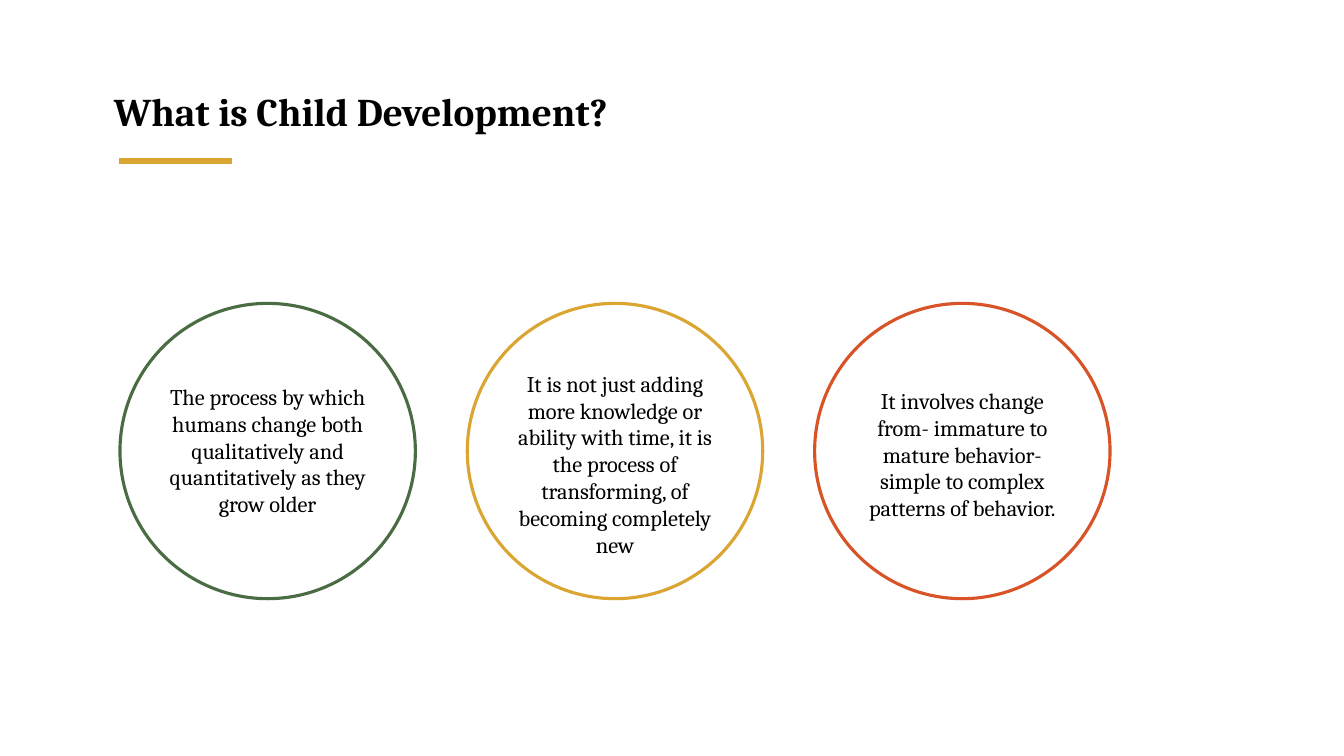
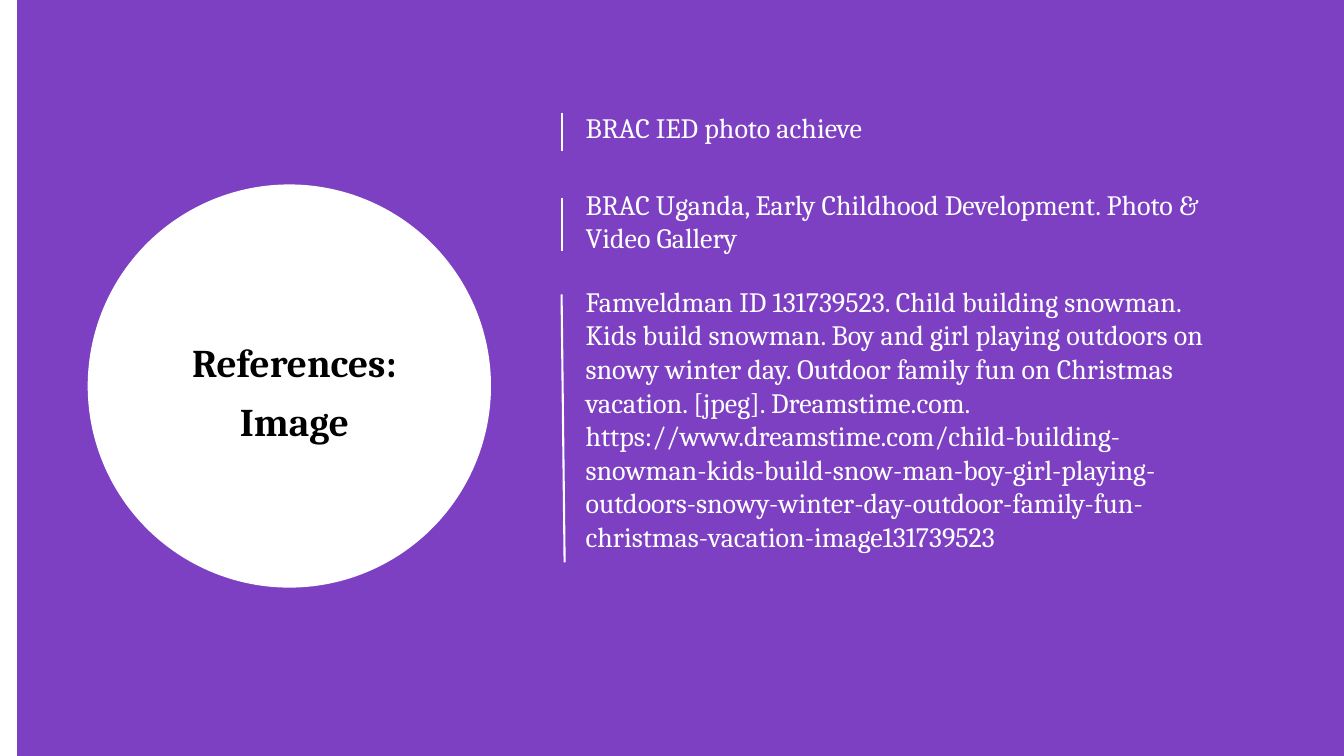
from pptx import Presentation
from pptx.dml.color import RGBColor
from pptx.enum.shapes import MSO_CONNECTOR as Connector, MSO_SHAPE as Shape
from pptx.enum.text import MSO_ANCHOR as Anchor, MSO_AUTO_SIZE as AutoSize, PP_ALIGN as Align
from pptx.oxml.ns import qn
from pptx.util import Inches, Pt
from lxml.etree import SubElement

BLACK = RGBColor(0x00, 0x00, 0x00)
WHITE = RGBColor(0xFF, 0xFF, 0xFF)
GOLD = RGBColor(0xDA, 0xA5, 0x30)
GREEN = RGBColor(0x4A, 0x6C, 0x43)
ORANGE = RGBColor(0xD8, 0x53, 0x27)
PURPLE = RGBColor(0x7D, 0x40, 0xC3)

TITLE_ONLY = 5


class Slides:
    """Holds the shared style and the slide being built."""

    font_name = "Cambria"
    title_size = 28

    def __init__(self):
        self.deck = Presentation()
        self.deck.slide_width = Inches(13.33)
        self.deck.slide_height = Inches(7.5)
        self.page = None

    def add_page(self):
        self.page = self.deck.slides.add_slide(self.deck.slide_layouts[TITLE_ONLY])

    def fill_text(self, box, lines, size, color, align, bold=False):
        frame = box.text_frame
        frame.word_wrap = True
        frame.auto_size = AutoSize.NONE
        frame.vertical_anchor = Anchor.TOP
        frame.text = "\n".join(lines)
        for number, para in enumerate(frame.paragraphs):
            para.alignment = align
            para.space_before = Pt(8 if number else 0)
            para.font.name = self.font_name
            para.font.size = Pt(size)
            para.font.bold = bold
            para.font.color.rgb = color

    def title(self, lines, left, top, width, height, align=Align.LEFT):
        box = self.page.shapes.title
        box.left, box.top = Inches(left), Inches(top)
        box.width, box.height = Inches(width), Inches(height)
        self.fill_text(box, lines, self.title_size, BLACK, align, bold=True)
        # Bring the title in front of the shapes drawn so far
        box.element.getparent().append(box.element)

    def text(self, words, left, top, width, height, size, color, align=Align.LEFT):
        box = self.page.shapes.add_textbox(
            Inches(left), Inches(top), Inches(width), Inches(height))
        self.fill_text(box, [words], size, color, align)

    def shape(self, kind, left, top, width, height, fill=None, outline=None):
        shape = self.page.shapes.add_shape(
            kind, Inches(left), Inches(top), Inches(width), Inches(height))
        shape.shadow.inherit = False
        if fill is None:
            shape.fill.background()
        else:
            shape.fill.solid()
            shape.fill.fore_color.rgb = fill
        if outline is None:
            shape.line.fill.background()
        else:
            shape.line.color.rgb = outline
            shape.line.width = Pt(2.25)

    def line(self, x1, y1, x2, y2, color, width):
        line = self.page.shapes.add_connector(
            Connector.STRAIGHT, Inches(x1), Inches(y1), Inches(x2), Inches(y2))
        line.line.color.rgb = color
        line.line.width = Pt(width)
        SubElement(line.element.spPr, qn("a:effectLst"))


def build_definition(slides):
    slides.add_page()
    slides.title(["What is Child Development?"], 1.03, 0.82, 9.03, 0.57)
    slides.line(1.18, 1.6, 2.3, 1.6, GOLD, 4.5)

    # Three equally spaced circles: outline, text top, text height, words
    circles = [
        (GREEN, 3.75, 1.45, "The process by which humans change both qualitatively "
                            "and quantitatively as they grow older"),
        (GOLD, 3.62, 1.99, "It is not just adding more knowledge or ability with time, "
                           "it is the process of transforming, of becoming completely new"),
        (ORANGE, 3.79, 1.45, "It involves change from- immature to mature behavior- "
                             "simple to complex patterns of behavior."),
    ]
    first_left, last_left, diameter, text_width = 1.19, 8.08, 2.93, 2.35
    pitch = (last_left - first_left) / (len(circles) - 1)
    inset = (diameter - text_width) / 2
    for number, (color, top, height, words) in enumerate(circles):
        left = first_left + number * pitch
        slides.text(words, left + inset, top, text_width, height, 16, BLACK, Align.CENTER)
        slides.shape(Shape.OVAL, left, 3.01, diameter, diameter, outline=color)


def build_references(slides):
    slides.add_page()
    # Purple panel and the title circle
    slides.shape(Shape.RECTANGLE, 0.17, 0, 13.16, 7.5, fill=PURPLE)
    slides.shape(Shape.OVAL, 0.87, 1.83, 4, 4, fill=WHITE)
    slides.title(["References:", "Image"], 0.87, 3.31, 4.1, 1.16, Align.CENTER)

    # References: text top, text height, rule top, rule bottom, rule end x, words
    references = [
        (1.05, 0.44, 1.12, 1.5, 5.57, "BRAC IED photo achieve"),
        (1.81, 0.77, 1.96, 2.49, 5.57,
         "BRAC Uganda, Early Childhood Development. Photo & Video Gallery"),
        (2.77, 2.79, 2.92, 5.58, 5.6,
         "Famveldman ID 131739523. Child building snowman. Kids build snowman. "
         "Boy and girl playing outdoors on snowy winter day. Outdoor family fun on "
         "Christmas vacation. [jpeg]. Dreamstime.com. "
         "https://www.dreamstime.com/child-building-snowman-kids-build-snow-man-boy-"
         "girl-playing-outdoors-snowy-winter-day-outdoor-family-fun-christmas-"
         "vacation-image131739523"),
    ]
    for top, height, rule_top, rule_bottom, rule_end, words in references:
        slides.text(words, 5.71, top, 6.67, height, 20, WHITE)
        slides.line(5.57, rule_top, rule_end, rule_bottom, WHITE, 1.5)


def main():
    slides = Slides()
    build_definition(slides)
    build_references(slides)
    slides.deck.save("out.pptx")


if __name__ == "__main__":
    main()
